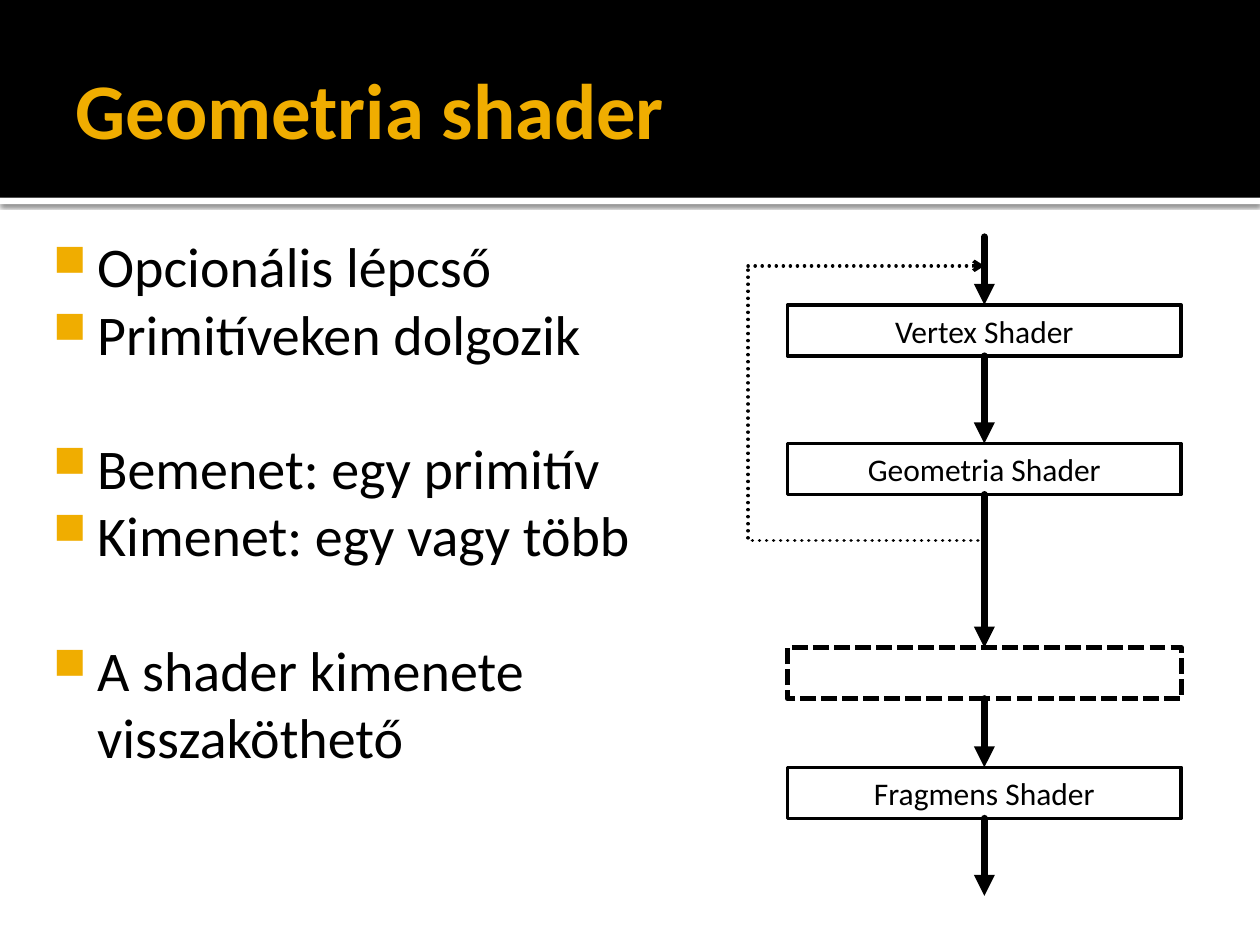
from lxml.etree import SubElement
from pptx import Presentation
from pptx.dml.color import RGBColor as RGB
from pptx.enum.dml import MSO_LINE as DASH
from pptx.enum.shapes import MSO_CONNECTOR as CONN, MSO_SHAPE as SHAPE
from pptx.enum.text import MSO_ANCHOR as ANCHOR, PP_ALIGN as ALIGN
from pptx.oxml.ns import qn
from pptx.util import Inches, Pt

COLORS = {"ink": "000000", "paper": "FFFFFF", "accent": "F0AD00"}
COLS, ROWS = 16, 75
COL, ROW = Inches(10) / COLS, Inches(7.5) / ROWS
STEP_H = 4.05


def color(name):
    """Return a palette colour."""
    return RGB.from_string(COLORS[name])


def grid(x, y, *size):
    """Turn columns and rows into lengths."""
    return [round(v * u) for v, u in zip((x, y, *size), (COL, ROW) * 2)]


def child(parent, tag, **attrs):
    """Append a drawing element with its attributes."""
    return SubElement(parent, qn(f"a:{tag}"), {k: str(v) for k, v in attrs.items()})


def stroke(sp, width, dash=None):
    """Draw the line of a shape or connector in ink."""
    sp.line.color.rgb = color("ink")
    sp.line.width = Pt(width)
    if dash:
        sp.line.dash_style = dash


def rect(slide, box, fill=None):
    """Add a plain rectangle."""
    sp = slide.shapes.add_shape(SHAPE.RECTANGLE, *grid(*box))
    sp.shadow.inherit = False
    if fill:
        sp.fill.solid()
        sp.fill.fore_color.rgb = color(fill)
        sp.line.fill.background()
    else:
        sp.fill.background()
    return sp


def connector(slide, start, end, width, dash=None, head=None, kind=CONN.STRAIGHT):
    """Add a round-capped line between two grid points."""
    cx = slide.shapes.add_connector(kind, *grid(*start), *grid(*end))
    stroke(cx, width, dash)
    ln = cx.line._get_or_add_ln()
    ln.set("cap", "rnd")
    if head:
        child(ln, "tailEnd", type=head)
    child(cx._element.spPr, "effectLst")
    return cx


def set_frame(tf, insets, anchor):
    """Set wrapping, anchor and insets in inches."""
    sides = ("margin_left", "margin_top", "margin_right", "margin_bottom")
    values = dict(zip(sides, map(Inches, insets)), word_wrap=True, vertical_anchor=anchor)
    for name, value in values.items():
        setattr(tf, name, value)


def write(p, text, size, ink="ink", bold=False):
    """Write one formatted run into a paragraph."""
    r = p.add_run()
    r.text = text
    for name, value in {"name": "Calibri", "size": Pt(size), "bold": bold}.items():
        setattr(r.font, name, value)
    r.font.color.rgb = color(ink)


def header(slide, x, y, w, h, title):
    """Place the dark band, its shadowed rule and the title."""
    rule = rect(slide, (x, y + h, w, 0.5), "paper")
    shadow = child(rule._element.spPr.find(qn("a:effectLst")), "outerShdw",
                   blurRad=Pt(2.5), dist=Pt(0.8), dir=90 * 60000, algn="tl", rotWithShape=0)
    child(child(shadow, "srgbClr", val=COLORS["ink"]), "alpha", val=60000)
    rect(slide, (x, y, w, h), "ink")
    tf = slide.shapes.add_textbox(*grid(x + 0.8, y + 1.7, w - 1.6, h - 2)).text_frame
    set_frame(tf, (0.1, 0.05, 0.05, 0.05), ANCHOR.MIDDLE)
    write(tf.paragraphs[0], title, 45, "accent", True)


def bullets(slide, x, y, w, h, groups):
    """List bullet groups with one line of space between them."""
    tf = slide.shapes.add_textbox(*grid(x, y, w, h)).text_frame
    set_frame(tf, (0.06, 0.1, 0.1, 0.05), ANCHOR.TOP)
    items = [(text, g > 0 and i == 0) for g, group in enumerate(groups)
             for i, text in enumerate(group)]
    for n, (text, gap) in enumerate(items):
        p = tf.add_paragraph() if n else tf.paragraphs[0]
        p.space_before = Pt(38.4 if gap else 0)
        pPr = p._p.get_or_add_pPr()
        pPr.set("marL", str(Inches(0.48)))
        pPr.set("indent", str(Inches(-0.35)))
        child(child(pPr, "buClr"), "srgbClr", val=COLORS["accent"])
        child(pPr, "buSzPct", val=80000)
        child(pPr, "buChar", char="■")
        write(p, text, 32)


def pipeline(slide, x, y, w, h, steps):
    """Draw the shader stages, their arrows and the feedback loop."""
    axis, loop_in, loop_out = x + w / 2, y + 2.3, y + 24.15
    for top, text in steps:
        sp = rect(slide, (x + w / 12, y + top, w * 5 / 6, STEP_H))
        stroke(sp, *((2,) if text else (3, DASH.SQUARE_DOT)))
        if text:
            set_frame(sp.text_frame, (0.1, 0.05, 0.1, 0.05), ANCHOR.MIDDLE)
            p = sp.text_frame.paragraphs[0]
            p.alignment = ALIGN.CENTER
            write(p, text, 18)
    tops = [top for top, _ in steps]
    for start, end in zip([0] + [top + STEP_H for top in tops], tops + [h]):
        connector(slide, (axis, y + start), (axis, y + end), 4, head="triangle")
    mid_x, mid_y = (x + axis) / 2, (loop_in + loop_out) / 2
    half_w = (loop_out - loop_in) * ROW / COL / 2
    half_h = (axis - x) * COL / ROW / 2
    elbow = connector(slide, (mid_x - half_w, mid_y + half_h), (mid_x + half_w, mid_y - half_h),
                      2, DASH.ROUND_DOT, kind=CONN.ELBOW)
    spPr = elbow._element.spPr
    spPr.find(qn("a:xfrm")).set("rot", str(270 * 60000))
    child(spPr.find(qn("a:prstGeom")).find(qn("a:avLst")), "gd", name="adj1", fmla="val 200")
    connector(slide, (x, loop_in), (axis, loop_in), 2, DASH.ROUND_DOT, "arrow")


def main():
    """Build and save the slide."""
    prs = Presentation()
    prs.slide_width, prs.slide_height = grid(COLS, ROWS)
    s = prs.slides.add_slide(prs.slide_layouts[6])
    header(s, 0, 0, COLS, 15.7, "Geometria shader")
    bullets(s, 0.37, 17.4, 8.75, 50.6, [
        ("Opcionális lépcső", "Primitíveken dolgozik"),
        ("Bemenet: egy primitív", "Kimenet: egy vagy több"),
        ("A shader kimenete visszaköthető",)])
    pipeline(s, 9.5, 18.8, 6, 52.3, [
        (5.4, "Vertex Shader"), (16.4, "Geometria Shader"),
        (32.6, ""), (42.1, "Fragmens Shader")])
    prs.save("out.pptx")


if __name__ == "__main__":
    main()
